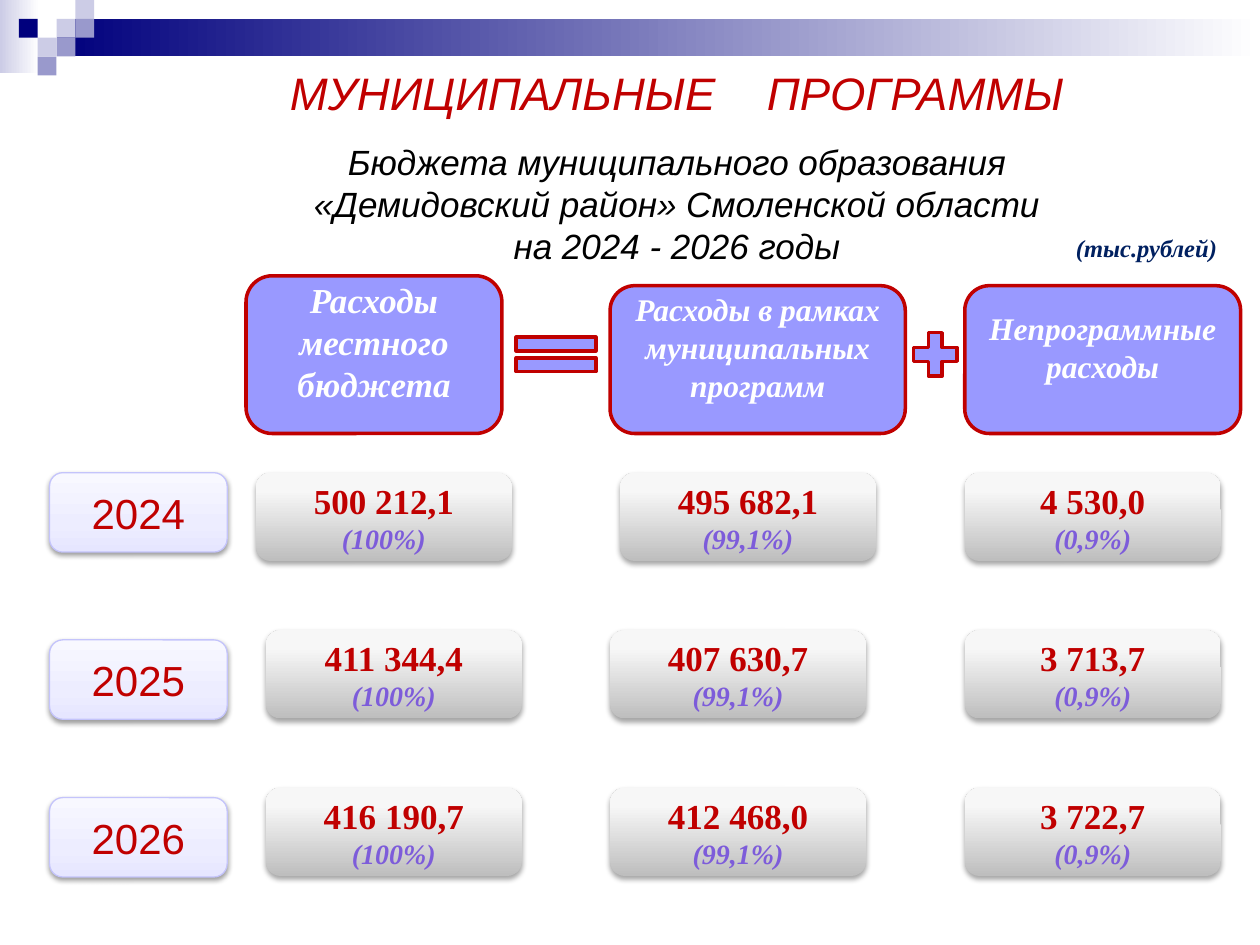
"""Build the slide on municipal programme spending for 2024 - 2026."""
import dataclasses

import lxml.etree
import pptx
import pptx.dml.color
import pptx.enum.shapes
import pptx.enum.text
import pptx.oxml.ns
import pptx.util

Cm = pptx.util.Cm
Pt = pptx.util.Pt
Preset = pptx.enum.shapes.MSO_SHAPE
Align = pptx.enum.text.PP_ALIGN
Anchor = pptx.enum.text.MSO_ANCHOR


@dataclasses.dataclass(frozen=True)
class Theme:
    sans: str = "Arial"
    serif: str = "Times New Roman"
    red: str = "C00000"
    black: str = "000000"
    white: str = "FFFFFF"
    violet: str = "7D5CDA"
    unit_blue: str = "002060"
    navy: str = "00007D"
    pale: str = "CCCCE6"
    mid: str = "9999CC"
    lilac: str = "9999FF"
    year_line: str = "C4C4FB"
    year_stops: tuple = ((0, "E6E6FF"), (35, "EDEDFF"), (100, "F8F8FF"))
    value_stops: tuple = ((0, "BEBEBE"), (80, "F7F7F7"), (100, "F8F8F8"))
    title_size: int = 26
    year_size: int = 24
    large_size: int = 20
    header_size: int = 18
    share_size: int = 16
    unit_size: int = 14


class SlideBuilder:
    def __init__(self, slide, theme):
        self.slide = slide
        self.theme = theme

    def shape(self, preset, box, fill, line=None, line_width=2):
        shape = self.slide.shapes.add_shape(preset, *map(Cm, box))
        shape.shadow.inherit = False
        if isinstance(fill, str):
            shape.fill.solid()
            shape.fill.fore_color.rgb = pptx.dml.color.RGBColor.from_string(fill)
        if line:
            shape.line.color.rgb = pptx.dml.color.RGBColor.from_string(line)
            shape.line.width = Pt(line_width)
        else:
            shape.line.fill.background()
        return shape

    def gradient(self, shape, stops, angle=0):
        shape.fill.gradient()
        shape.fill.gradient_angle = angle
        stop_list = shape.element.spPr.find(".//" + pptx.oxml.ns.qn("a:gsLst"))
        stop_list.clear()
        for position, color in stops:
            stop = self.child(stop_list, "a:gs", pos=position * 1000)
            self.child(stop, "a:srgbClr", val=color)

    def shadow(self, shape, opacity, distance):
        effects = shape.element.spPr.find(pptx.oxml.ns.qn("a:effectLst"))
        shadow = self.child(effects, "a:outerShdw", blurRad=Pt(3.1), dist=Pt(distance),
                            dir=5400000, rotWithShape=0)
        color = self.child(shadow, "a:srgbClr", val=self.theme.black)
        self.child(color, "a:alpha", val=opacity * 1000)

    def child(self, parent, tag, **attributes):
        element = lxml.etree.SubElement(parent, pptx.oxml.ns.qn(tag))
        for name, value in attributes.items():
            element.set(name, str(value))
        return element

    def paragraph(self, frame, text, size, color, font, bold=False, italic=False, first=False):
        paragraph = frame.paragraphs[0] if first else frame.add_paragraph()
        paragraph.alignment = Align.CENTER
        paragraph.font.size = Pt(size)
        paragraph.font.name = font
        paragraph.font.bold = bold
        paragraph.font.italic = italic
        paragraph.font.color.rgb = pptx.dml.color.RGBColor.from_string(color)
        paragraph.add_run().text = text
        return paragraph

    def text_box(self, box, wrap):
        frame = self.slide.shapes.add_textbox(*map(Cm, box)).text_frame
        frame.word_wrap = wrap
        return frame

    def banner(self):
        theme = self.theme
        for box, color in (((0, 0, 0.79, 1.47), theme.pale), ((1.14, 0.38, 24.26, 0.76), theme.navy)):
            bar = self.shape(Preset.RECTANGLE, box, None)
            self.gradient(bar, ((0, color), (100, theme.white)))
        unit = 0.38
        squares = ((3, 1, theme.pale), (4, 0, theme.pale), (4, 1, theme.mid), (2, 2, theme.pale),
                   (1, 1, theme.navy), (3, 2, theme.mid), (2, 3, theme.mid))
        for column, row, color in squares:
            self.shape(Preset.RECTANGLE, (column * unit, row * unit, unit, unit), color)

    def title(self, words, lines):
        theme = self.theme
        frame = self.text_box((3.45, 1.32, 20.4, 4.2), True)
        frame.margin_top = 0
        heading = self.paragraph(frame, words[0], theme.title_size, theme.red, theme.sans,
                                 italic=True, first=True)
        gap = heading.add_run()
        gap.text = " "
        gap.font._element.set("spc", "2170")
        heading.add_run().text = words[1]
        heading.space_after = Pt(11.5)
        for line in lines:
            self.paragraph(frame, line, theme.large_size, theme.black, theme.sans, italic=True)

    def unit_label(self, text):
        theme = self.theme
        frame = self.text_box((21.44, 4.57, 3.38, 0.86), False)
        label = self.paragraph(frame, text, theme.unit_size, theme.unit_blue, theme.serif,
                               bold=True, italic=True, first=True)
        label.alignment = Align.LEFT

    def header(self, box, text, size):
        theme = self.theme
        frame = self.shape(Preset.ROUNDED_RECTANGLE, box, theme.lilac, theme.red).text_frame
        frame.vertical_anchor = Anchor.MIDDLE
        frame.margin_bottom = Cm(0.64)
        self.paragraph(frame, text, size, theme.white, theme.serif, bold=True, italic=True, first=True)

    def operator(self, preset, box):
        self.shape(preset, box, self.theme.lilac, self.theme.red)

    def year(self, top, text):
        theme = self.theme
        tile = self.shape(Preset.ROUNDED_RECTANGLE, (1, top, 3.58, 1.6), None, theme.year_line, 0.75)
        self.gradient(tile, theme.year_stops, 90)
        self.shadow(tile, 38, 1.6)
        tile.text_frame.vertical_anchor = Anchor.MIDDLE
        self.paragraph(tile.text_frame, text, theme.year_size, theme.red, theme.sans, first=True)

    def value(self, left, top, amount, share):
        theme = self.theme
        tile = self.shape(Preset.ROUNDED_RECTANGLE, (left, top, 5.16, 1.78), None)
        self.gradient(tile, theme.value_stops, 90)
        self.shadow(tile, 35, 1.8)
        frame = tile.text_frame
        frame.vertical_anchor = Anchor.MIDDLE
        self.paragraph(frame, amount, theme.large_size, theme.red, theme.serif, bold=True, first=True)
        self.paragraph(frame, share, theme.share_size, theme.violet, theme.serif, bold=True, italic=True)


def main():
    presentation = pptx.Presentation()
    presentation.slide_width, presentation.slide_height = Cm(25.4), Cm(19.05)
    theme = Theme()
    builder = SlideBuilder(presentation.slides.add_slide(presentation.slide_layouts[6]), theme)
    builder.banner()
    builder.title(("МУНИЦИПАЛЬНЫЕ", "ПРОГРАММЫ"),
                  ("Бюджета муниципального образования",
                   "«Демидовский район» Смоленской области",
                   "на 2024 - 2026 годы"))
    builder.unit_label("(тыс.рублей)")
    builder.header((4.96, 5.56, 5.16, 3.18), "Расходы местного бюджета", theme.large_size)
    builder.header((12.3, 5.76, 5.95, 2.98), "Расходы в рамках муниципальных программ", theme.header_size)
    builder.header((19.45, 5.76, 5.56, 2.98), "Непрограммные расходы", theme.header_size)
    builder.operator(Preset.MATH_EQUAL, (10.12, 6.55, 2.18, 1.19))
    builder.operator(Preset.MATH_PLUS, (18.26, 6.55, 1.19, 1.19))

    shares = ("(100%)", "(99,1%)", "(0,9%)")
    upper_lefts, lower_lefts = (5.16, 12.5, 19.45), (5.36, 12.3, 19.45)
    rows = (("2024", 9.53, upper_lefts, ("500 212,1", "495 682,1", "4 530,0")),
            ("2025", 12.9, lower_lefts, ("411 344,4", "407 630,7", "3 713,7")),
            ("2026", 16.08, lower_lefts, ("416 190,7", "412 468,0", "3 722,7")))
    for index, (year, year_top, lefts, amounts) in enumerate(rows):
        builder.year(year_top, year)
        for left, amount, share in zip(lefts, amounts, shares):
            builder.value(left, 9.53 + index * 3.175, amount, share)
    presentation.save("out.pptx")


if __name__ == "__main__":
    main()
